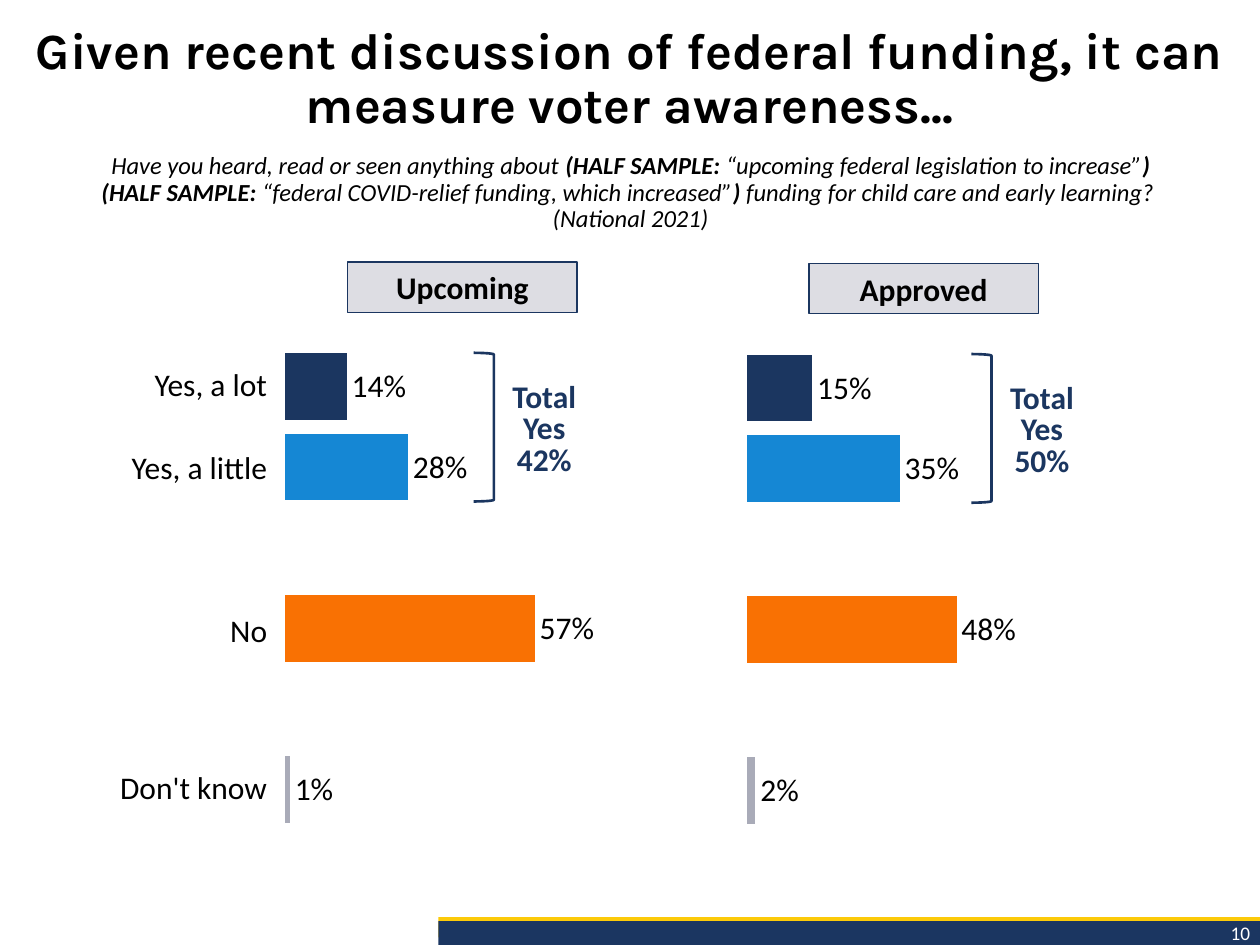
from lxml import etree
from pptx import Presentation
from pptx.chart.data import CategoryChartData
from pptx.dml.color import RGBColor
from pptx.enum.chart import XL_CHART_TYPE as ChartType, XL_LABEL_POSITION as LabelPos
from pptx.enum.chart import XL_TICK_LABEL_POSITION as TickLabels, XL_TICK_MARK as Tick
from pptx.enum.shapes import MSO_SHAPE as Shape
from pptx.enum.text import MSO_ANCHOR as Anchor, MSO_AUTO_SIZE as AutoSize, PP_ALIGN as Align
from pptx.oxml.ns import qn
from pptx.util import Inches, Pt

COLORS = {
    "black": "000000", "white": "FFFFFF", "navy": "1B3660", "footer": "1B3661",
    "gold": "FCCA09", "blue": "1587D4", "orange": "F97103", "gray": "A9ABB8",
    "header": "DDDDE3",
}
ANSWERS = [("Yes, a lot", 0.32), ("Yes, a little", 0.66), ("", 0.31),
           ("No", 0.99), ("", 0.31), ("Don't know", 0.93)]
POINT_COLORS = {0: "navy", 3: "orange", 5: "gray"}
PLOT_LAYOUT = {"x": 0.047, "y": 0.019, "w": 0.84, "h": 0.911}
QUESTION = [
    ("Have you heard, read or seen anything about ", False),
    ("(HALF SAMPLE: ", True),
    ("“upcoming federal legislation to increase”", False),
    (") (HALF SAMPLE: ", True),
    ("“federal COVID-relief funding, which increased”", False),
    (") ", True),
    ("funding for child care and early learning? \v(National 2021)", False),
]


def rgb(name):
    """Return the named colour."""
    return RGBColor.from_string(COLORS[name])


def box(left, top, width, height):
    """Return a position and size in inches as lengths."""
    return [Inches(value) for value in (left, top, width, height)]


def set_font(font, size, color="black", bold=None, name="Calibri"):
    """Give a font its face, size, colour and weight."""
    font.name, font.size, font.bold = name, Pt(size), bold
    font.color.rgb = rgb(color)


def add_outline(slide, kind, place, fill=None, line=None, width=0.75):
    """Add a flat shape with the given fill and line."""
    shape = slide.shapes.add_shape(kind, *place)
    shape.shadow.inherit = False
    if fill:
        shape.fill.solid()
        shape.fill.fore_color.rgb = rgb(fill)
    else:
        shape.fill.background()
    if line:
        shape.line.color.rgb = rgb(line)
        shape.line.width = Pt(width)
    else:
        shape.line.fill.background()
    return shape


def add_footer(slide, left, top, width):
    """Add the footer bars and the page number."""
    add_outline(slide, Shape.RECTANGLE, box(left, top, width, 0.16), "gold")
    add_outline(slide, Shape.RECTANGLE, box(left, top + 0.03, width, 0.19), "footer")
    number = slide.shapes.add_textbox(*box(left + width - 1.46, top - 0.02, 1.48, 0.29))
    number.text_frame.word_wrap = True
    paragraph = number.text_frame.paragraphs[0]
    paragraph.text = "10"
    paragraph.alignment = Align.RIGHT
    set_font(paragraph.font, 11, "white")


def add_title(slide, left, top, width, height):
    """Place and format the slide title."""
    title = slide.shapes.title
    title.left, title.top, title.width, title.height = box(left, top, width, height)
    frame = title.text_frame
    frame.text = "Given recent discussion of federal funding, it can measure voter awareness..."
    frame.word_wrap, frame.auto_size = True, AutoSize.NONE
    frame.vertical_anchor = Anchor.TOP
    paragraph = frame.paragraphs[0]
    paragraph.alignment, paragraph.line_spacing = Align.CENTER, 0.9
    set_font(paragraph.font, 29, bold=True, name="Karla")


def add_question(slide, left, top, width, height):
    """Add the survey question with its bold sample notes."""
    frame = slide.shapes.add_textbox(*box(left, top, width, height)).text_frame
    frame.word_wrap, frame.vertical_anchor = True, Anchor.BOTTOM
    paragraph = frame.paragraphs[0]
    paragraph.alignment, paragraph.line_spacing = Align.CENTER, 0.9
    for words, bold in QUESTION:
        for index, line in enumerate(words.split("\v")):
            if index:
                paragraph.add_line_break()
            run = paragraph.add_run()
            run.text = line
            set_font(run.font, 14, bold=bold)
            run.font.italic = True


def add_answer_labels(slide, left, top, width):
    """Add the table of answer labels beside the bars."""
    height = sum(row_height for _, row_height in ANSWERS)
    table = slide.shapes.add_table(len(ANSWERS), 1, *box(left, top, width, height)).table
    table.first_row = table.horz_banding = False
    for index, (answer, row_height) in enumerate(ANSWERS):
        table.rows[index].height = Inches(row_height)
        cell = table.cell(index, 0)
        cell.fill.background()
        cell.vertical_anchor = Anchor.BOTTOM
        cell.margin_left = cell.margin_right = cell.margin_top = Inches(0.01)
        cell.margin_bottom = 0
        paragraph = cell.text_frame.paragraphs[0]
        paragraph.text = answer
        paragraph.alignment = Align.RIGHT
        set_font(paragraph.font, 18)


def set_plot_layout(chart):
    """Fix the inner plot area as fractions of the chart."""
    plot_area = chart.plots[0]._element.getparent()
    layout = plot_area.find(qn("c:layout"))
    if layout is None:
        layout = etree.Element(qn("c:layout"))
        plot_area.insert(0, layout)
    manual = etree.SubElement(layout, qn("c:manualLayout"))
    settings = {"layoutTarget": "inner", "xMode": "edge", "yMode": "edge", **PLOT_LAYOUT}
    for tag, value in settings.items():
        etree.SubElement(manual, qn(f"c:{tag}")).set("val", str(value))


def add_bars(slide, left, top, values):
    """Add the bar chart of one half sample."""
    data = CategoryChartData(number_format="0%")
    data.categories = [str(number) for number in range(1, len(values) + 1)]
    data.add_series("Series 1", values)
    chart = slide.shapes.add_chart(
        ChartType.BAR_CLUSTERED, *box(left, top, 3.1, 4.21), data).chart
    chart.has_legend = chart.has_title = False
    set_font(chart.font, 16)
    categories, scale = chart.category_axis, chart.value_axis
    categories.reverse_order = True
    categories.tick_label_position = TickLabels.NONE
    categories.major_tick_mark = categories.minor_tick_mark = Tick.NONE
    categories.format.line.fill.background()
    scale.visible = scale.has_major_gridlines = False
    scale.minimum_scale, scale.maximum_scale, scale.major_unit = 0, 0.75, 0.15
    plot = chart.plots[0]
    plot.gap_width, plot.vary_by_categories = 21, False
    series = plot.series[0]
    series.format.fill.solid()
    series.format.fill.fore_color.rgb = rgb("blue")
    for index, color in POINT_COLORS.items():
        fill = series.points[index].format.fill
        fill.solid()
        fill.fore_color.rgb = rgb(color)
    labels = series.data_labels
    labels.show_value, labels.position = True, LabelPos.OUTSIDE_END
    labels.number_format, labels.number_format_is_linked = "0%", False
    set_font(labels.font, 18)
    set_plot_layout(chart)


def add_panel(slide, left, top, heading, values, bracket_offset):
    """Add one half sample: heading, bars, bracket and total."""
    add_bars(slide, left, top, values)
    bracket_left, bracket_top = left + bracket_offset, top + 0.13
    add_outline(slide, Shape.RIGHT_BRACKET, box(bracket_left, bracket_top, 0.16, 1.18),
                line="navy", width=1.5)
    total = slide.shapes.add_textbox(*box(bracket_left - 0.09, bracket_top + 0.19, 1.3, 0.87))
    total.text_frame.word_wrap = True
    total.text_frame.text = f"Total\nYes\v{values[0] + values[1]:.0%}"
    for paragraph in total.text_frame.paragraphs:
        paragraph.alignment, paragraph.line_spacing = Align.CENTER, Pt(18)
        set_font(paragraph.font, 18, "navy", True)
    header = add_outline(slide, Shape.RECTANGLE, box(left + 0.64, top - 0.59, 1.82, 0.4),
                         "header", "navy")
    paragraph = header.text_frame.paragraphs[0]
    paragraph.text = heading
    paragraph.alignment = Align.CENTER
    set_font(paragraph.font, 18, bold=True)


def main():
    """Build and save the slide."""
    deck = Presentation()
    deck.slide_width, deck.slide_height = Inches(10), Inches(7.5)
    slide = deck.slides.add_slide(deck.slide_layouts[5])
    add_footer(slide, 3.48, 7.28, 6.52)
    add_title(slide, 0, 0.15, 10, 1.31)
    add_answer_labels(slide, -0.15, 2.89, 2.28)
    add_panel(slide, 2.12, 2.67, "Upcoming", [0.14, 0.28, None, 0.57, None, 0.01], 1.64)
    add_panel(slide, 5.78, 2.68, "Approved", [0.15, 0.35, None, 0.48, None, 0.02], 1.93)
    add_question(slide, 0.67, 1.36, 8.67, 0.54)
    deck.save("out.pptx")


if __name__ == "__main__":
    main()
